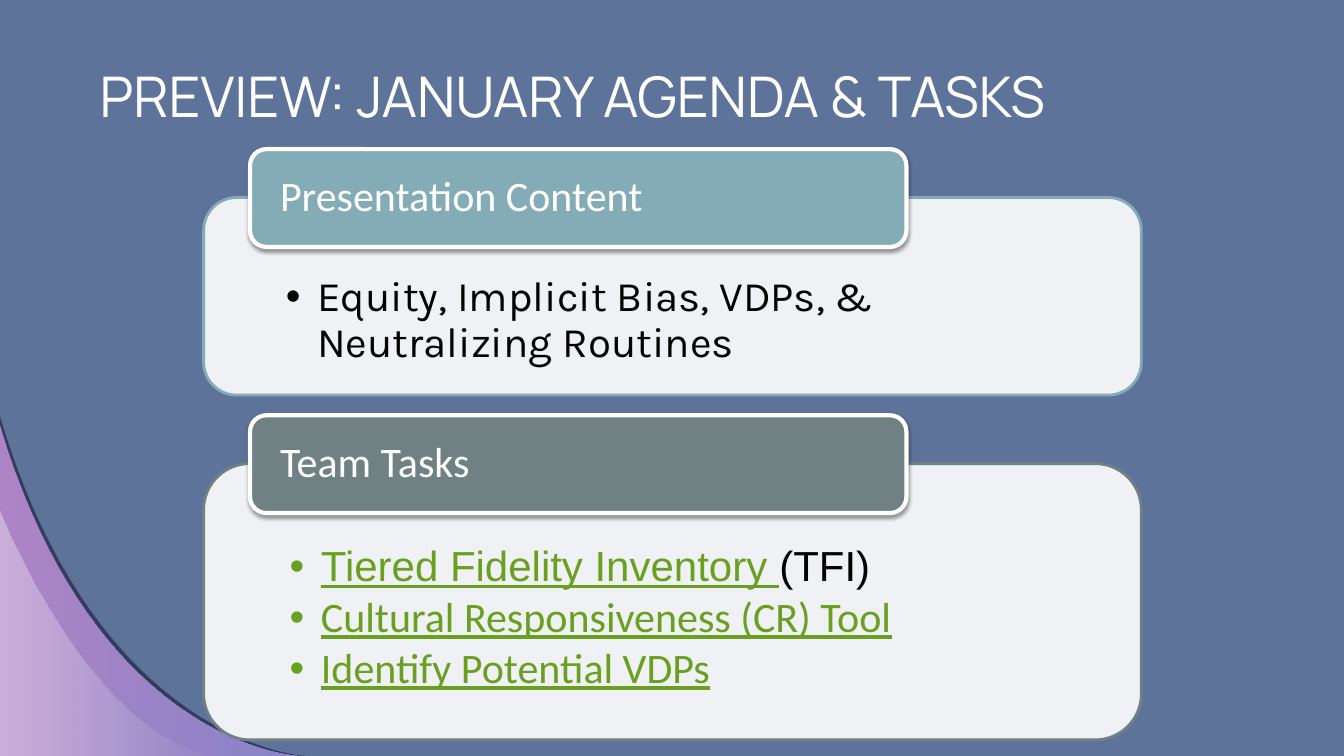
from dataclasses import dataclass

from lxml.etree import SubElement
from pptx import Presentation
from pptx.dml.color import RGBColor
from pptx.enum.shapes import MSO_SHAPE as Shape
from pptx.enum.text import MSO_ANCHOR as Anchor, PP_ALIGN as Align
from pptx.oxml.ns import qn
from pptx.util import Inches, Pt


@dataclass(frozen=True)
class Theme:
    background: str = "5D739A"
    white: str = "FFFFFF"
    black: str = "000000"
    teal: str = "84ACB6"
    slate: str = "6F8183"
    link: str = "69A020"
    navy: str = "12102F"
    orchid: str = "AD84C6"
    violet: str = "8784C7"
    title_size: int = 40
    text_size: int = 30
    title_font: str = "Manrope"
    text_font: str = "Calibri"


THEME = Theme()


def rgb(color):
    return RGBColor.from_string(color)


def set_alpha(shape, *percents):
    colors = shape._element.spPr.iter(qn("a:srgbClr"))
    for color, percent in zip(colors, percents):
        SubElement(color, qn("a:alpha"), val=str(percent * 1000))


def add_shadow(shape):
    effects = shape._element.spPr.find(qn("a:effectLst"))
    shadow = SubElement(effects, qn("a:outerShdw"), blurRad=str(Pt(3.1)),
                        dist=str(Pt(1.6)), dir="5400000", rotWithShape="0")
    color = SubElement(shadow, qn("a:srgbClr"), val=THEME.black)
    SubElement(color, qn("a:alpha"), val="38000")


def write_text(shape, paragraphs, size=THEME.text_size, insets=(0.1, 0.1, 0.1, 0.1),
               anchor=Anchor.TOP, bullet=False, spacing=None, after=0):
    frame = shape.text_frame
    frame.word_wrap = True
    frame.vertical_anchor = anchor
    (frame.margin_left, frame.margin_top,
     frame.margin_right, frame.margin_bottom) = map(Inches, insets)
    for index, runs in enumerate(paragraphs):
        paragraph = frame.add_paragraph() if index else frame.paragraphs[0]
        paragraph.alignment = Align.LEFT
        paragraph.line_spacing = spacing
        paragraph.space_after = Pt(after)
        if bullet:
            properties = paragraph._p.get_or_add_pPr()
            properties.set("marL", str(Inches(0.31)))
            properties.set("indent", str(Inches(-0.31)))
            SubElement(properties, qn("a:buFont"), typeface="Arial")
            SubElement(properties, qn("a:buChar"), char="•")
        for text, font, color, underline in runs:
            run = paragraph.add_run()
            run.text = text
            run.font.size = Pt(size)
            run.font.name = font
            run.font.color.rgb = rgb(color)
            run.font.underline = underline


def add_rounded_box(slide, box, fill, line, line_width):
    shape = slide.shapes.add_shape(Shape.ROUNDED_RECTANGLE, *map(Inches, box))
    shape.shadow.inherit = False
    shape.fill.solid()
    shape.fill.fore_color.rgb = rgb(fill)
    shape.line.color.rgb = rgb(line)
    shape.line.width = Pt(line_width)
    return shape


def add_section(slide, box, heading, color, items):
    left, top, width, height = box
    panel = add_rounded_box(slide, box, THEME.white, color, 2)
    set_alpha(panel, 90)
    write_text(panel, items, insets=(0.72, 0.68, 0.72, 0.23),
               bullet=True, spacing=0.9, after=4)
    tab_box = (left + 0.46, top - 0.48, width * 0.7, 0.97)
    tab = add_rounded_box(slide, tab_box, color, THEME.white, 3)
    add_shadow(tab)
    write_text(tab, [[(heading, THEME.text_font, THEME.white, False)]],
               insets=(0.25, 0, 0.25, 0), anchor=Anchor.MIDDLE, spacing=0.9)


def curve_points(start, first, second, end, steps=40):
    for step in range(steps + 1):
        t = step / steps
        weights = ((1 - t) ** 3, 3 * t * (1 - t) ** 2, 3 * t ** 2 * (1 - t), t ** 3)
        yield tuple(sum(weight * point[axis] for weight, point
                        in zip(weights, (start, first, second, end)))
                    for axis in (0, 1))


def add_swoosh(slide, box, first, second, colors, alphas):
    left, top, width, height = box
    corners = [(left + width * x, top + height * y)
               for x, y in ((0, 0), first, second, (1, 1))]
    points = [(Inches(x), Inches(y)) for x, y in curve_points(*corners)]
    builder = slide.shapes.build_freeform(*points[0])
    builder.add_line_segments(points[1:] + [(Inches(left), Inches(top + height))])
    shape = builder.convert_to_shape()
    shape.shadow.inherit = False
    shape.line.fill.background()
    if len(colors) == 1:
        shape.fill.solid()
        shape.fill.fore_color.rgb = rgb(colors[0])
    else:
        shape.fill.gradient()
        shape.fill.gradient_angle = 0
        for stop, color, position in zip(shape.fill.gradient_stops, colors, (0, 1)):
            stop.color.rgb = rgb(color)
            stop.position = position
    set_alpha(shape, *alphas)


def add_corner(slide, box):
    left, top, width, height = box
    bottom = top + height
    layers = (
        (width, height, (0.32, 0.97), (1, 1), [THEME.navy], [54]),
        (2.95, 3.28, (0.32, 0.97), (1, 1), [THEME.orchid, THEME.violet], []),
        (2.16, 2.44, (0, 0), (0.42, 0.94), [THEME.white, THEME.white], [36, 0]),
    )
    for layer_width, layer_height, first, second, colors, alphas in layers:
        layer_box = (left, bottom - layer_height, layer_width, layer_height)
        add_swoosh(slide, layer_box, first, second, colors, alphas)


def add_title(slide, box, text):
    title = slide.shapes.add_textbox(*map(Inches, box))
    write_text(title, [[(text, THEME.title_font, THEME.white, False)]],
               size=THEME.title_size)


def build_agenda_slide(presentation):
    slide = presentation.slides.add_slide(presentation.slide_layouts[6])
    slide.background.fill.solid()
    slide.background.fill.fore_color.rgb = rgb(THEME.background)
    add_corner(slide, (0, 4.13, 3.03, 3.37))
    add_section(slide, (2.02, 1.96, 9.3, 1.96), "Presentation Content", THEME.teal, [
        [("Equity, Implicit Bias, VDPs, & Neutralizing Routines",
          "Karla", THEME.black, False)],
    ])
    add_section(slide, (2.02, 4.6, 9.3, 2.74), "Team Tasks", THEME.slate, [
        [("Tiered Fidelity Inventory ", "Arial", THEME.link, True),
         ("(TFI)", "Arial", THEME.black, False)],
        [("Cultural Responsiveness (CR) Tool", THEME.text_font, THEME.link, True)],
        [("Identify Potential VDPs", THEME.text_font, THEME.link, True)],
    ])
    add_title(slide, (0.89, 0.51, 11.23, 0.92), "PREVIEW: JANUARY AGENDA & TASKS")


def main():
    presentation = Presentation()
    presentation.slide_width = Inches(13.33)
    presentation.slide_height = Inches(7.5)
    build_agenda_slide(presentation)
    presentation.save("out.pptx")


if __name__ == "__main__":
    main()
